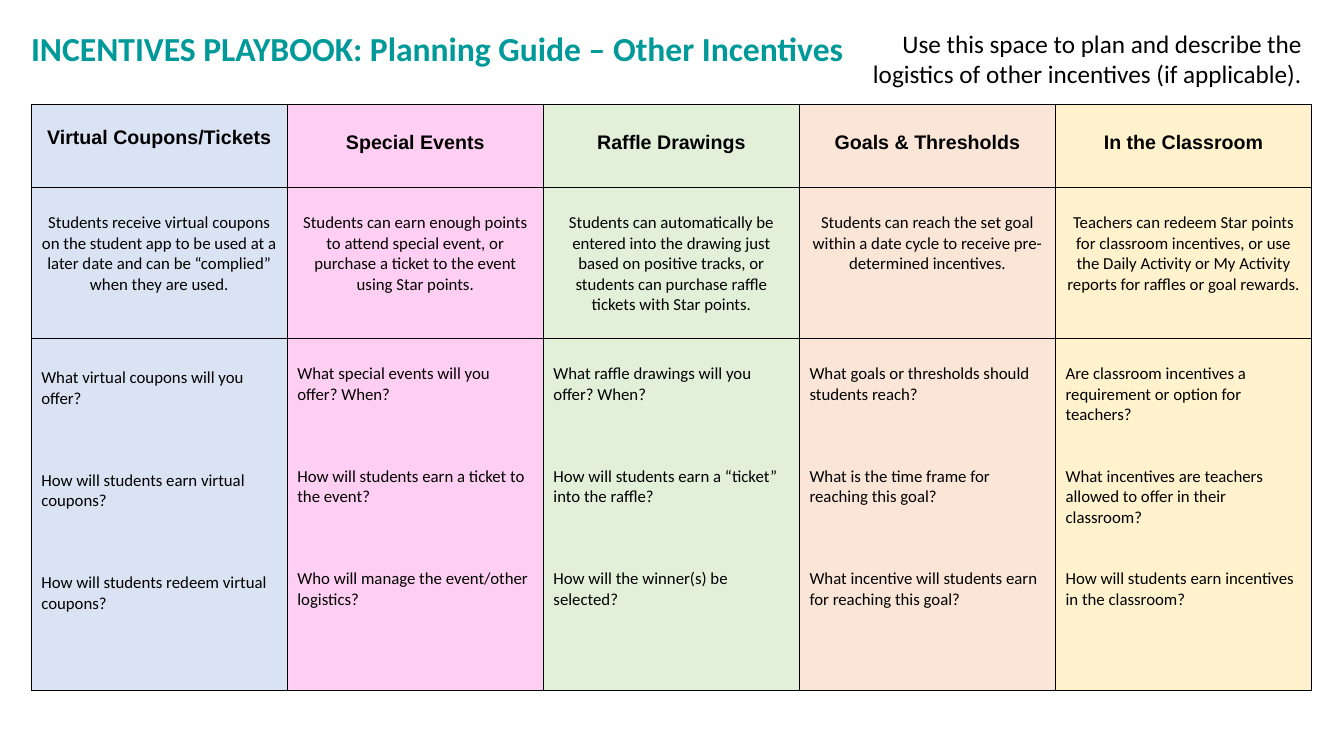
from dataclasses import dataclass
from lxml.etree import SubElement
from pptx import Presentation
from pptx.dml.color import RGBColor
from pptx.enum.text import PP_ALIGN
from pptx.oxml import parse_xml
from pptx.oxml.ns import nsdecls, qn
from pptx.util import Inches, Pt

TITLE = "INCENTIVES PLAYBOOK: Planning Guide – Other Incentives"
HINT = "Use this space to plan and describe the logistics of other incentives (if applicable)."
PLANS = [
    ("Virtual Coupons/Tickets",
     "Students receive virtual coupons on the student app to be used at a later date "
     "and can be “complied” when they are used.",
     ["What virtual coupons will you offer?",
      "How will students earn virtual coupons?",
      "How will students redeem virtual coupons?"]),
    ("Special Events",
     "Students can earn enough points to attend special event, or purchase a ticket "
     "to the event using Star points.",
     ["What special events will you offer? When?",
      "How will students earn a ticket to the event?",
      "Who will manage the event/other logistics?"]),
    ("Raffle Drawings",
     "Students can automatically be entered into the drawing just based on positive "
     "tracks, or students can purchase raffle tickets with Star points.",
     ["What raffle drawings will you offer? When?",
      "How will students earn a “ticket” into the raffle?",
      "How will the winner(s) be selected?"]),
    ("Goals & Thresholds",
     "Students can reach the set goal within a date cycle to receive pre-determined "
     "incentives.",
     ["What goals or thresholds should students reach?",
      "What is the time frame for reaching this goal?",
      "What incentive will students earn for reaching this goal?"]),
    ("In the Classroom",
     "Teachers can redeem Star points for classroom incentives, or use the Daily "
     "Activity or My Activity reports for raffles or goal rewards.",
     ["Are classroom incentives a requirement or option for teachers?",
      "What incentives are teachers allowed to offer in their classroom?",
      "How will students earn incentives in the classroom?"]),
]


@dataclass(frozen=True)
class Theme:
    ink: str = "000000"
    teal: str = "009999"
    tints: tuple = (("DAE3F3", 100), ("FF33CC", 23), ("E2F0D9", 100),
                    ("FBE5D6", 100), ("FFF2CC", 100))
    head: str = "Arial"
    body: str = "Calibri"
    big: int = 24
    mid: int = 18
    label: int = 14
    small: int = 12


LOOK = Theme()
WIDE, HIGH = 13.33, 7.5
EDGE, TOP = 0.31, 1.04
COL = 2.54
ROWS = (0.82, 1.5, 3.49)
PADS = (0.27, 0.25, 0.25)
FIRST = (0.22, 0.25, 0.29)
GAPS = (44, 44, 44, 44, 29.3)


def write(frame, lines, size, font, color=LOOK.ink, bold=False, align=PP_ALIGN.LEFT, gap=0):
    frame.text = "\n".join(lines)
    for i, para in enumerate(frame.paragraphs):
        para.alignment = align
        para.space_before = Pt(gap if i else 0)
        for run in para.runs:
            run.font.size = Pt(size)
            run.font.name = font
            run.font.bold = bold
            run.font.color.rgb = RGBColor.from_string(color)


def paint(cell, tint, alpha):
    cell.fill.solid()
    cell.fill.fore_color.rgb = RGBColor.from_string(tint)
    props = cell._tc.get_or_add_tcPr()
    if alpha < 100:
        mark = props.find(".//" + qn("a:srgbClr"))
        SubElement(mark, qn("a:alpha")).set("val", str(alpha * 1000))
    for i, side in enumerate("LRTB"):
        props.insert(i, parse_xml(
            f'<a:ln{side} {nsdecls("a")} w="12700"><a:solidFill>'
            f'<a:srgbClr val="{LOOK.ink}"/></a:solidFill></a:ln{side}>'))


def box(slide, left, top, width, height, wrap):
    frame = slide.shapes.add_textbox(*map(Inches, (left, top, width, height))).text_frame
    frame.word_wrap = wrap
    return frame


def main():
    deck = Presentation()
    deck.slide_width, deck.slide_height = Inches(WIDE), Inches(HIGH)
    slide = deck.slides.add_slide(deck.slide_layouts[6])

    write(box(slide, 0.21, 0.23, 8.34, 0.81, False), [TITLE],
          LOOK.big, LOOK.body, LOOK.teal, True)

    grid = slide.shapes.add_table(
        len(ROWS), len(PLANS), Inches(EDGE), Inches(TOP),
        Inches(COL * len(PLANS)), Inches(sum(ROWS))).table
    grid.first_row = grid.horz_banding = False
    for row, height in zip(grid.rows, ROWS):
        row.height = Inches(height)
    for c, (name, about, asks) in enumerate(PLANS):
        grid.columns[c].width = Inches(COL)
        for r, lines in enumerate(([name], [about], asks)):
            cell = grid.cell(r, c)
            cell.margin_top = Inches((PADS if c else FIRST)[r])
            paint(cell, *LOOK.tints[c])
            top = r == 0
            if top and c == 0:
                cell.margin_left = cell.margin_right = Inches(0.07)
            write(cell.text_frame, lines,
                  LOOK.label if top else LOOK.small,
                  LOOK.head if top else LOOK.body, bold=top,
                  align=PP_ALIGN.LEFT if r == 2 else PP_ALIGN.CENTER, gap=GAPS[c])

    write(box(slide, 8.41, 0.23, 4.6, 0.71, True), [HINT],
          LOOK.mid, LOOK.body, align=PP_ALIGN.RIGHT)
    deck.save("out.pptx")


if __name__ == "__main__":
    main()
